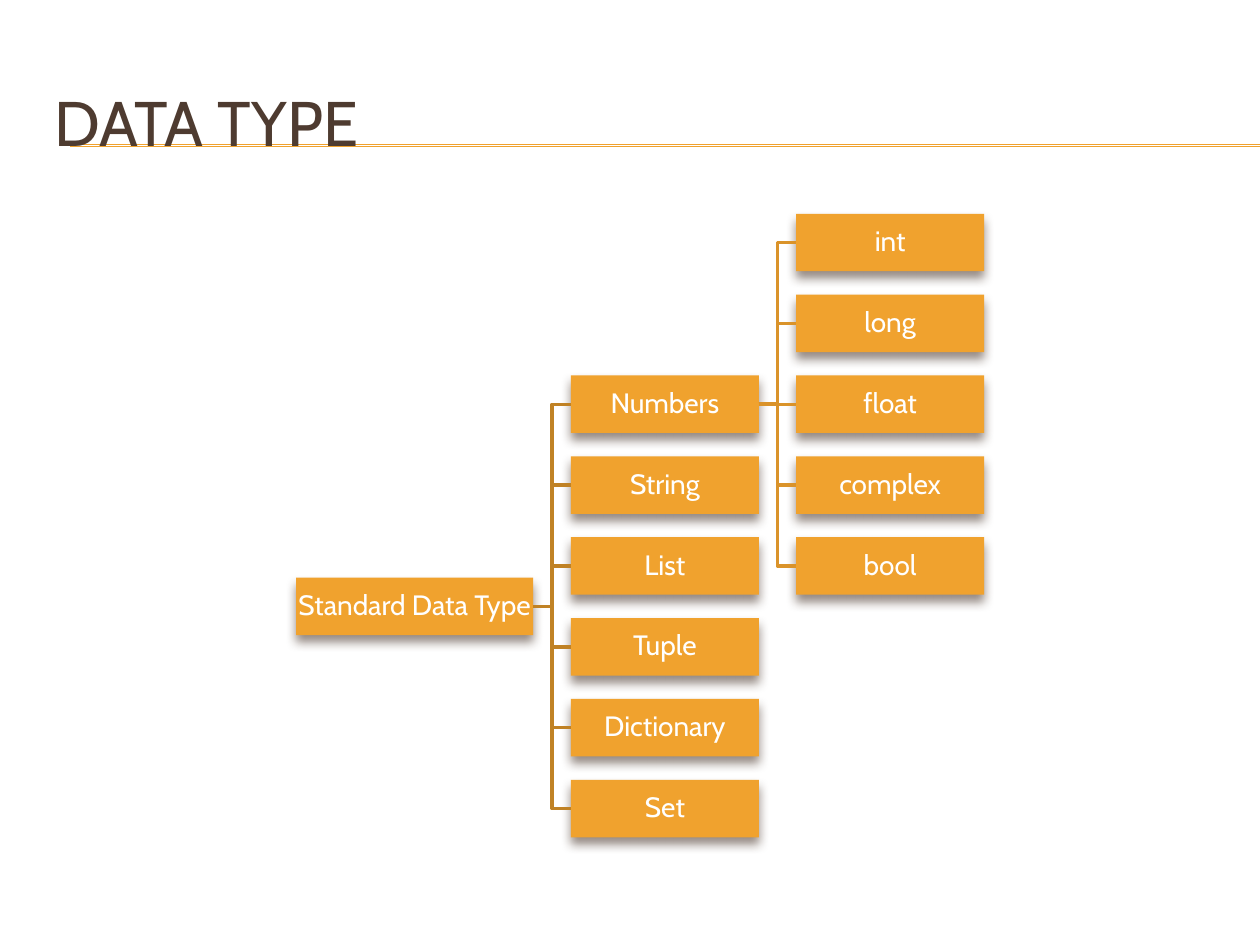
from lxml import etree
from pptx import Presentation
from pptx.dml.color import RGBColor
from pptx.enum.shapes import MSO_CONNECTOR, MSO_SHAPE
from pptx.enum.text import MSO_ANCHOR, PP_ALIGN
from pptx.oxml import parse_xml
from pptx.oxml.ns import nsdecls, qn
from pptx.util import Cm, Pt

RECT = MSO_SHAPE.RECTANGLE
STRAIGHT = MSO_CONNECTOR.STRAIGHT
MIDDLE = MSO_ANCHOR.MIDDLE
LEFT, CENTER = PP_ALIGN.LEFT, PP_ALIGN.CENTER

ORANGE = RGBColor(0xF0, 0xA2, 0x2E)
AMBER = RGBColor(0xDA, 0x93, 0x2A)
OCHRE = RGBColor(0xC0, 0x82, 0x25)
BROWN = RGBColor(0x4E, 0x3B, 0x30)
WHITE = RGBColor(0xFF, 0xFF, 0xFF)

TITLE_FONT = {"name": "Cabin", "size": Pt(36)}
BOX_FONT = {"name": "Cabin", "size": Pt(16)}
BOX_FRAME = {"margin_left": Cm(0.03), "margin_right": Cm(0.03),
             "margin_top": Cm(0.03), "margin_bottom": Cm(0.03),
             "vertical_anchor": MIDDLE, "word_wrap": True}

TOP, PITCH, BOX_H = 4.31, 1.63, 1.16
ROOT_X, ROOT_W = 5.97, 4.78
TYPE_X, NUMBER_X, BOX_W = 11.51, 16.05, 3.79
TYPES = ["Numbers", "String", "List", "Tuple", "Dictionary", "Set"]
NUMBERS = ["int", "long", "float", "complex", "bool"]
FIRST_TYPE_ROW = 2


def apply(obj, values):
    """Set every attribute named in values on obj."""
    for name, value in values.items():
        setattr(obj, name, value)


def write(tf, text, font, color, align):
    """Put one formatted line of text in a text frame."""
    p = tf.paragraphs[0]
    p.alignment = align
    r = p.add_run()
    r.text = text
    apply(r.font, font)
    r.font.color.rgb = color


def add_title(slide, text):
    """Place the title in front of the header rules."""
    sp = slide.shapes.title
    apply(sp, {"left": Cm(0.84), "top": Cm(1.27),
               "width": Cm(24.13), "height": Cm(2.34)})
    sp.text_frame.vertical_anchor = MIDDLE
    write(sp.text_frame, text, TITLE_FONT, BROWN, LEFT)
    slide.shapes.element.append(sp.element)


def add_line(slide, x1, y1, x2, y2, color, width):
    """Draw a straight line without a shadow."""
    line = slide.shapes.add_connector(STRAIGHT, x1, y1, x2, y2)
    line.line.color.rgb = color
    line.line.width = Pt(width)
    etree.SubElement(line.element.spPr, qn("a:effectLst"))
    return line


def add_box(slide, text, x, row, width):
    """Draw a labelled box with a soft shadow on a grid row."""
    sp = slide.shapes.add_shape(RECT, Cm(x), Cm(TOP + row * PITCH),
                                Cm(width), Cm(BOX_H))
    sp.fill.solid()
    sp.fill.fore_color.rgb = ORANGE
    sp.line.fill.background()
    sp.shadow.inherit = False
    sp.element.spPr.find(qn("a:effectLst")).append(parse_xml(
        f'<a:outerShdw {nsdecls("a")} blurRad="{Pt(6)}" dist="{Pt(4)}" '
        f'dir="5400000" rotWithShape="0"><a:srgbClr val="{BROWN}">'
        '<a:alpha val="60000"/></a:srgbClr></a:outerShdw>'))
    apply(sp.text_frame, BOX_FRAME)
    write(sp.text_frame, text, BOX_FONT, WHITE, CENTER)
    sp.text_frame.paragraphs[0].line_spacing = 0.9
    return sp


def add_link(slide, parent, child, color):
    """Join a parent's right side to a child's left side."""
    x1, x2 = parent.left + parent.width, child.left
    y1, y2 = (s.top + s.height // 2 for s in (parent, child))
    if parent.top == child.top:
        line = add_line(slide, x1, y1, x2, y2, color, 2)
        line.begin_connect(parent, 3)
        line.end_connect(child, 1)
        return
    mid = (x1 + x2) // 2
    builder = slide.shapes.build_freeform(x1, y1)
    builder.add_line_segments([(mid, y1), (mid, y2), (x2, y2)], close=False)
    sp = builder.convert_to_shape()
    sp.fill.background()
    sp.line.color.rgb = color
    sp.line.width = Pt(2)
    sp.shadow.inherit = False


def add_branch(slide, parent, labels, x, first_row, color):
    """Stack child boxes in a column and link them to their parent."""
    boxes = [add_box(slide, label, x, first_row + i, BOX_W)
             for i, label in enumerate(labels)]
    for box in boxes:
        add_link(slide, parent, box, color)
    return boxes


def main():
    """Build the data type slide."""
    prs = Presentation()
    prs.slide_width, prs.slide_height = Cm(25.4), Cm(19.05)
    slide = prs.slides.add_slide(prs.slide_layouts[5])
    for y in (2.92, 2.95):
        add_line(slide, Cm(1.42), Cm(y), prs.slide_width, Cm(y), ORANGE, 0.75)
    add_title(slide, "DATA TYPE")
    root_row = FIRST_TYPE_ROW + (len(TYPES) - 1) / 2
    root = add_box(slide, "Standard Data Type", ROOT_X, root_row, ROOT_W)
    types = add_branch(slide, root, TYPES, TYPE_X, FIRST_TYPE_ROW, OCHRE)
    add_branch(slide, types[0], NUMBERS, NUMBER_X, 0, AMBER)
    prs.save("out.pptx")


if __name__ == "__main__":
    main()
